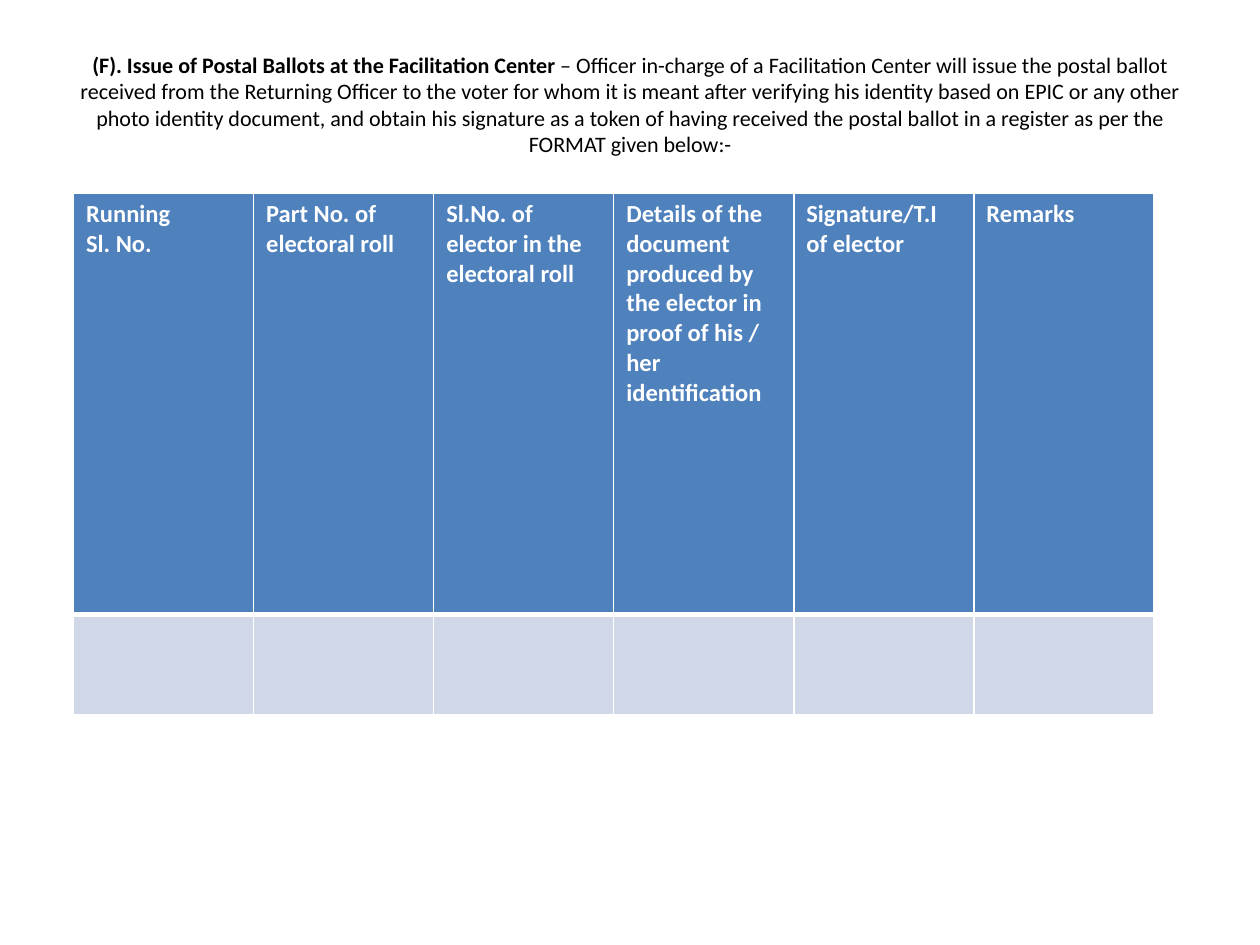
from lxml.etree import SubElement
from pptx import Presentation
from pptx.dml.color import RGBColor
from pptx.enum.text import MSO_ANCHOR, PP_ALIGN
from pptx.oxml.ns import qn
from pptx.util import Pt

BLACK, WHITE, BLUE, PALE = "000000", "FFFFFF", "4F81BD", "D0D8E8"
HEADING = "(F). Issue of Postal Ballots at the Facilitation Center"
INTRO = (" – Officer in-charge of a Facilitation Center will issue the postal ballot "
         "received from the Returning Officer to the voter for whom it is meant after "
         "verifying his identity based on EPIC or any other photo identity document, "
         "and obtain his signature as a token of having received the postal ballot in "
         "a register as per the FORMAT given below:-")
HEADERS = ["Running\nSl. No.", "Part No. of electoral roll",
           "Sl.No. of elector in the electoral roll",
           "Details of the document produced by the elector in proof of his / her identification",
           "Signature/T.I of elector", "Remarks"]
COL_WIDTH, ROW_HEIGHTS = 102.9, (241, 57)


def rgb(value):
    return RGBColor.from_string(value)


def add_run(p, text, size=14, color=WHITE, bold=False):
    r = p.add_run()
    r.text = text
    r.font.name = "Calibri"
    r.font.size = Pt(size)
    r.font.bold = bold
    r.font.color.rgb = rgb(color)


def add_intro(slide):
    tf = slide.shapes.add_textbox(Pt(36), Pt(21.6), Pt(648), Pt(90)).text_frame
    tf.word_wrap = True
    tf.vertical_anchor = MSO_ANCHOR.MIDDLE
    tf.margin_bottom = Pt(18)
    p = tf.paragraphs[0]
    p.alignment = PP_ALIGN.CENTER
    add_run(p, HEADING, size=12.6, color=BLACK, bold=True)
    add_run(p, INTRO, size=12.6, color=BLACK)


def set_borders(cell, **widths):
    """Draw white borders; the keywords L, R, T and B give widths in points."""
    props = cell._tc.get_or_add_tcPr()
    for index, (side, width) in enumerate(widths.items()):
        line = SubElement(props, qn(f"a:ln{side}"), w=str(Pt(width)))
        fill = SubElement(line, qn("a:solidFill"))
        SubElement(fill, qn("a:srgbClr"), val=WHITE)
        props.insert(index, line)


def fill_cell(cell, text, color):
    cell.fill.solid()
    cell.fill.fore_color.rgb = rgb(color)
    tf = cell.text_frame
    for i, line in enumerate(text.splitlines()):
        p = tf.add_paragraph() if i else tf.paragraphs[0]
        add_run(p, line, bold=True)


def add_register(slide):
    table = slide.shapes.add_table(
        len(ROW_HEIGHTS), len(HEADERS), Pt(42), Pt(110.2),
        Pt(COL_WIDTH * len(HEADERS)), Pt(sum(ROW_HEIGHTS))).table
    for row, height in zip(table.rows, ROW_HEIGHTS):
        row.height = Pt(height)
    for i, header in enumerate(HEADERS):
        table.columns[i].width = Pt(COL_WIDTH)
        head, body = table.cell(0, i), table.cell(1, i)
        fill_cell(head, header, BLUE)
        fill_cell(body, "", PALE)
        set_borders(head, L=1, R=1, T=1, B=3)
        set_borders(body, L=1, R=1, T=3, B=1)


def main():
    prs = Presentation()
    prs.slide_width, prs.slide_height = Pt(720), Pt(540)
    slide = prs.slides.add_slide(prs.slide_layouts[6])
    add_intro(slide)
    add_register(slide)
    prs.save("out.pptx")


if __name__ == "__main__":
    main()
